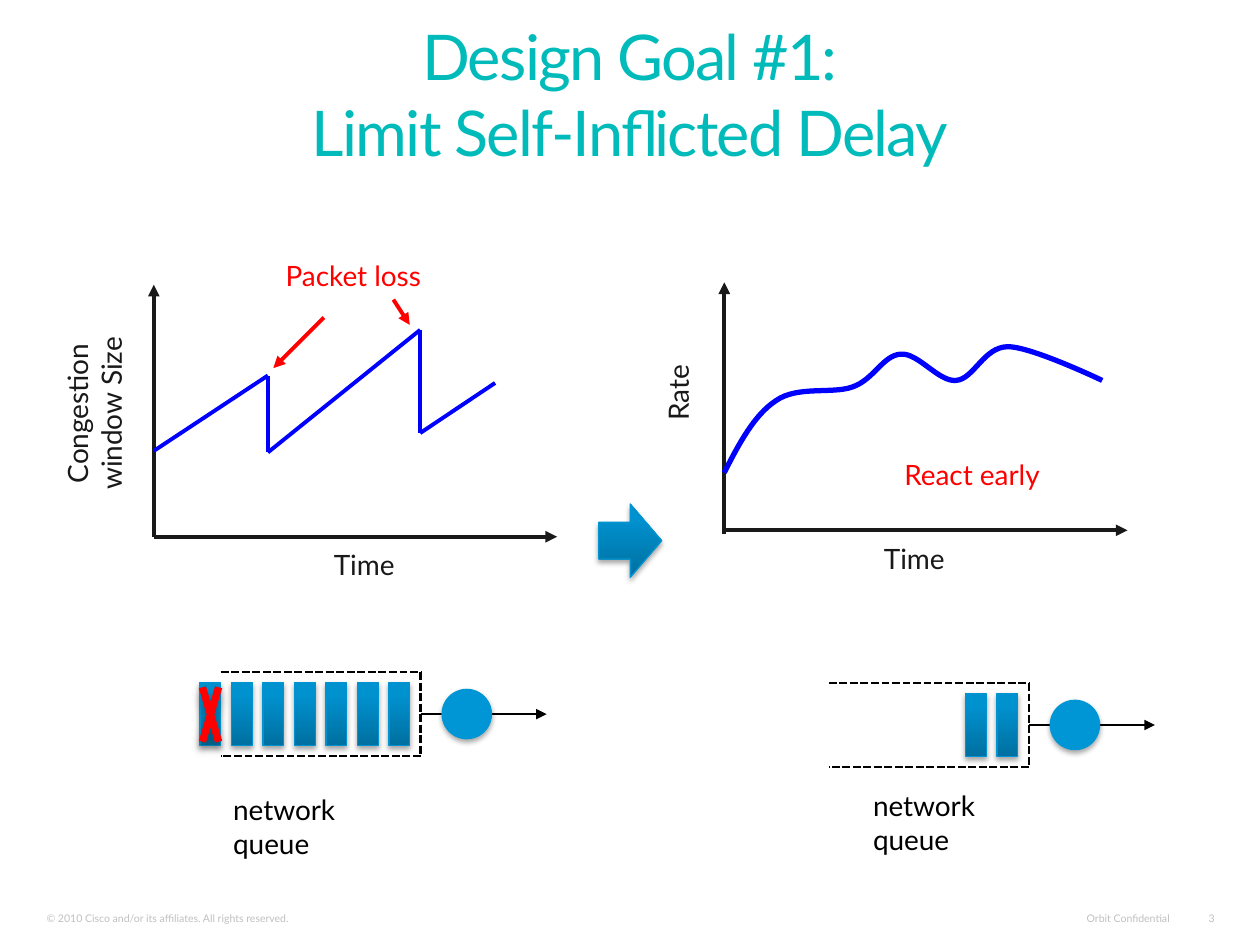
from itertools import pairwise

from lxml import etree
from pptx import Presentation
from pptx import util as u
from pptx.dml import color as c
from pptx.enum import dml, shapes, text
from pptx.oxml import ns

COLORS = {
    "title": "01BBBB", "footer": "C0C0C0", "ink": "191919", "black": "010000",
    "alert": "FF0000", "curve": "0000FF", "server": "0096D6",
    "edge": "0093D1", "dark": "0070A0", "light": "0091CF", "shadow": "000000",
}
FONT = "Lato"
LABEL_HEIGHT = 0.94
ALIGN = text.PP_ALIGN
ANCHOR = text.MSO_ANCHOR


def rgb(name):
    return c.RGBColor.from_string(COLORS[name])


def add_child(parent, tag, **attributes):
    return etree.SubElement(parent, ns.qn(tag), attributes)


def add_text(slide, content, left, top, width, height=LABEL_HEIGHT, *, color="ink",
             size=16, align=ALIGN.LEFT, anchor=ANCHOR.TOP, wrap=False,
             upward=False, spacing=None):
    box = slide.shapes.add_textbox(u.Cm(left), u.Cm(top), u.Cm(width), u.Cm(height))
    frame = box.text_frame
    frame.text = content
    frame.word_wrap = wrap
    frame.vertical_anchor = anchor
    if upward:
        frame._txBody.bodyPr.set("vert", "vert270")
    for paragraph in frame.paragraphs:
        paragraph.alignment = align
        for run in paragraph.runs:
            run.font.name = FONT
            run.font.size = u.Pt(size)
            run.font.color.rgb = rgb(color)
            if spacing is not None:
                run.font._element.set("spc", str(spacing))


def add_line(slide, start, end, color, width, dashed=False, arrow=False):
    connector = slide.shapes.add_connector(
        shapes.MSO_CONNECTOR.STRAIGHT, *(u.Cm(value) for value in (*start, *end)))
    connector.line.color.rgb = rgb(color)
    connector.line.width = u.Pt(width)
    if dashed:
        connector.line.dash_style = dml.MSO_LINE.SQUARE_DOT
        connector.line._ln.find(ns.qn("a:prstDash")).set("val", "sysDash")
    if arrow:
        add_child(connector.line._ln, "a:tailEnd", type="triangle")
    add_child(connector._element.spPr, "a:effectLst")


def add_block(slide, kind, left, top, width, height, color=None,
              opacity=35, blur=3.1, distance=1.8):
    shape = slide.shapes.add_shape(
        kind, u.Cm(left), u.Cm(top), u.Cm(width), u.Cm(height))
    if color:
        shape.fill.solid()
        shape.fill.fore_color.rgb = rgb(color)
        shape.line.fill.background()
    else:
        shape.fill.gradient()
        shape.fill.gradient_angle = 90
        for stop, name, position in zip(
                shape.fill.gradient_stops, ("dark", "light"), (0, 0.8)):
            stop.color.rgb = rgb(name)
            stop.position = position
        shape.line.color.rgb = rgb("edge")
        shape.line.width = u.Pt(0.75)
    shape.shadow.inherit = False
    effects = shape._element.spPr.find(ns.qn("a:effectLst"))
    shadow = add_child(effects, "a:outerShdw", blurRad=str(u.Pt(blur)),
                       dist=str(u.Pt(distance)), dir="5400000", rotWithShape="0")
    shade = add_child(shadow, "a:srgbClr", val=COLORS["shadow"])
    add_child(shade, "a:alpha", val=str(opacity * 1000))


def add_curve(slide, points, color, width):
    start, *rest = [(u.Cm(x), u.Cm(y)) for x, y in points]
    builder = slide.shapes.build_freeform(*start)
    builder.add_line_segments(rest, close=False)
    shape = builder.convert_to_shape()
    segments = list(shape._element.iter(ns.qn("a:lnTo")))
    outline = segments[0].getparent()
    for index in range(0, len(segments), 3):
        bezier = add_child(outline, "a:cubicBezTo")
        for segment in segments[index:index + 3]:
            bezier.append(segment[0])
            outline.remove(segment)
    shape.fill.background()
    shape.line.color.rgb = rgb(color)
    shape.line.width = u.Pt(width)
    shape.shadow.inherit = False


def place(points, left, top):
    return [(left + x, top + y) for x, y in points]


def draw_axes(slide, left, top, width, height, base, time_at):
    add_line(slide, (left, top + base), (left + width, top + base), "ink", 2.25, arrow=True)
    add_line(slide, (left, top + height), (left, top), "ink", 2.25, arrow=True)
    add_text(slide, "Time", left + time_at, top + base + 0.1, 1.75)


def draw_window_graph(slide, left, top, width, height):
    draw_axes(slide, left, top, width, height, height, 3.38)
    add_text(slide, "Congestion\nwindow Size", left - 2.01, top + 0.84, 1.88, 3.51,
             align=ALIGN.CENTER, upward=True)
    teeth = [(0, 3.35), (2.3, 1.83), (2.3, 3.38), (5.37, 0.91), (5.37, 2.99), (6.88, 1.98)]
    for start, end in pairwise(place(teeth, left, top)):
        add_line(slide, start, end, "curve", 2.25)
    add_text(slide, "Packet loss", left + 2.41, top - 0.66, 3.43, color="alert")
    for pointer in ([(3.43, 0.66), (2.41, 1.68)], [(4.83, 0.3), (5.16, 0.81)]):
        add_line(slide, *place(pointer, left, top), "alert", 2.25, arrow=True)


def draw_rate_graph(slide, left, top, width, height):
    draw_axes(slide, left, top, width, height, 5, 2.97)
    add_text(slide, "Rate", left - 1.4, top + 1.5, 1.19, 1.45,
             align=ALIGN.CENTER, upward=True)
    controls = [
        (0, 3.84), (0.3, 3.25), (0.61, 2.67), (1.04, 2.39),
        (1.47, 2.08), (2.18, 2.26), (2.59, 2.11),
        (3.02, 1.96), (3.2, 1.47), (3.56, 1.45),
        (3.91, 1.42), (4.32, 2.01), (4.67, 1.98),
        (5.03, 1.96), (5.23, 1.3), (5.72, 1.3),
        (6.2, 1.3), (7.62, 1.98), (7.62, 1.98),
    ]
    add_curve(slide, place(controls, left, top), "curve", 3)
    add_text(slide, "React early", left + 3.38, top + 3.4, 3.4, color="alert")


def draw_queue(slide, left, top, width, height, packets, label_at, drop=False):
    right, bottom, middle = left + width, top + height, top + height / 2
    walls = [(left, top), (right, top), (right, bottom), (left, bottom)]
    for start, end in pairwise(walls):
        add_line(slide, start, end, "black", 1.5, dashed=True)
    for index in range(packets):
        packet_left = right - 0.64 - index * 0.635
        add_block(slide, shapes.MSO_SHAPE.RECTANGLE,
                  packet_left, top + 0.21, 0.42, 1.27)
    if drop:
        add_block(slide, shapes.MSO_SHAPE.MATH_MULTIPLY, packet_left - 0.1, top - 0.2,
                  0.63, 2.11, "alert", opacity=27, blur=6, distance=4)
    add_line(slide, (right, middle), (right + 2.54, middle), "black", 1, arrow=True)
    add_block(slide, shapes.MSO_SHAPE.OVAL, right + 0.42, middle - 0.51, 1.02, 1.02, "server")
    label_left, label_top = label_at
    add_text(slide, "network queue", left + label_left, top + label_top, 4.24, color="black")


def draw_title(slide, left, top, width, height):
    add_text(slide, "Design Goal #1:\vLimit Self-Inflicted Delay", left, top, width, height,
             color="title", size=36, align=ALIGN.CENTER, anchor=ANCHOR.BOTTOM,
             wrap=True, spacing=-100)


def draw_footer(slide, left, top, height):
    style = {"color": "footer", "size": 6, "anchor": ANCHOR.BOTTOM}
    add_text(slide, "© 2010 Cisco and/or its affiliates. All rights reserved.",
             left, top, 9.14, height, wrap=True, **style)
    add_text(slide, "Orbit Confidential", left + 20.88, top, 2.26, height,
             align=ALIGN.RIGHT, **style)
    add_text(slide, "3", left + 23.34, top, 0.71, height, align=ALIGN.RIGHT, **style)


def main():
    presentation = Presentation()
    presentation.slide_width, presentation.slide_height = u.Cm(25.4), u.Cm(19.05)
    slide = presentation.slides.add_slide(presentation.slide_layouts[6])
    draw_footer(slide, 0.69, 18.29, 0.48)
    draw_title(slide, 0, 0, 25.4, 3.53)
    add_block(slide, shapes.MSO_SHAPE.RIGHT_ARROW, 12.07, 10.16, 1.27, 1.48)
    draw_queue(slide, 4.45, 13.55, 4.03, 1.69, 7, (0, 2.31), drop=True)
    draw_queue(slide, 16.71, 13.77, 4.03, 1.69, 2, (0.64, 2.01))
    draw_window_graph(slide, 3.1, 5.74, 8.13, 5.08)
    draw_rate_graph(slide, 14.6, 5.69, 8.13, 5.08)
    presentation.save("out.pptx")


if __name__ == "__main__":
    main()
